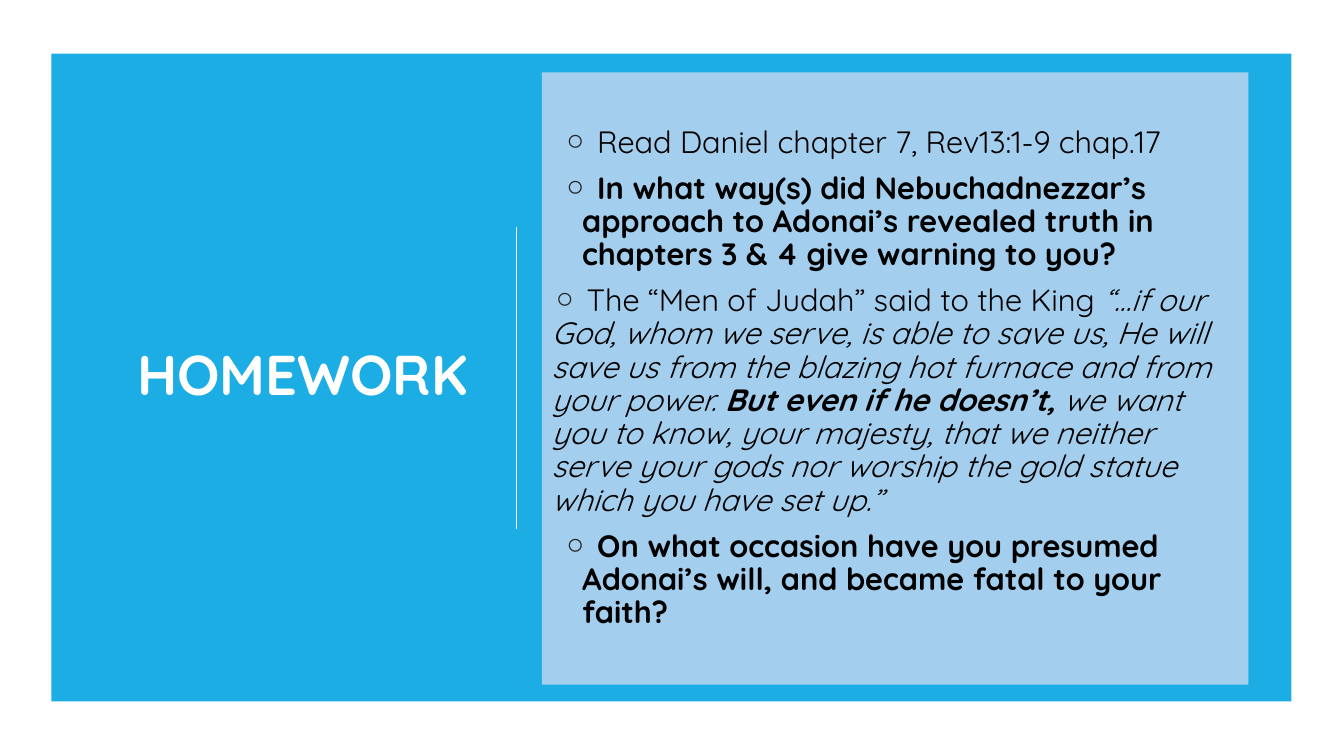
from lxml.etree import SubElement
from pptx import Presentation
from pptx.dml.color import RGBColor
from pptx.enum.shapes import MSO_CONNECTOR, MSO_SHAPE
from pptx.enum.text import MSO_ANCHOR, PP_ALIGN
from pptx.oxml.ns import qn
from pptx.util import Pt

PX = 9525
WHITE = RGBColor(0xFF, 0xFF, 0xFF)
BLACK = RGBColor(0x00, 0x00, 0x00)
BULLET = RGBColor(0x26, 0x26, 0x26)
BLUE = RGBColor(0x1C, 0xAD, 0xE4)
PALE_BLUE = RGBColor(0xA3, 0xCE, 0xED)

PLAIN, BOLD, ITALIC = {}, {"bold": True}, {"italic": True}
TASKS = [
    (29, [(" Read Daniel chapter 7, Rev13:1-9 chap.17", PLAIN)]),
    (29, [(" In what way(s) did Nebuchadnezzar’s approach to Adonai’s revealed truth "
           "in chapters 3 & 4 give warning to you?", BOLD)]),
    (0, [(" The “Men of Judah” said to the King ", PLAIN),
         ("“…if our God, whom we serve, is able to save us, He will save us from "
          "the blazing hot furnace and from your power.", ITALIC),
         (" But even if he doesn’t, ", BOLD | ITALIC),
         ("we want you to know, your majesty, that we neither serve your gods nor "
          "worship the gold statue which you have set up.”", ITALIC)]),
    (29, [(" On what occasion have you presumed Adonai’s will, and became fatal "
           "to your faith?", BOLD)]),
]


def add_panel(left, top, width, height, color):
    panel = slide.shapes.add_shape(
        MSO_SHAPE.RECTANGLE, left * PX, top * PX, width * PX, height * PX)
    panel.shadow.inherit = False
    panel.fill.solid()
    panel.fill.fore_color.rgb = color
    panel.line.fill.background()
    return panel


def add_run(paragraph, text, size, color, formats):
    run = paragraph.add_run()
    run.text = text
    run.font.color.rgb = color
    for name, value in ({"name": "Quicksand", "size": Pt(size)} | formats).items():
        setattr(run.font, name, value)


deck = Presentation()
deck.slide_width, deck.slide_height = 1280 * PX, 720 * PX
slide = deck.slides.add_slide(deck.slide_layouts[6])

add_panel(49, 51, 1181, 617, BLUE)

title = slide.shapes.add_textbox(74 * PX, 93 * PX, 381 * PX, 533 * PX).text_frame
title.word_wrap = True
title.vertical_anchor = MSO_ANCHOR.MIDDLE
heading = title.paragraphs[0]
heading.alignment = PP_ALIGN.RIGHT
heading.line_spacing = 0.9
add_run(heading, "HOMEWORK", 40, WHITE, BOLD)

divider = slide.shapes.add_connector(
    MSO_CONNECTOR.STRAIGHT, 492 * PX, 216 * PX, 492 * PX, 504 * PX)
divider.line.color.rgb = WHITE
divider.line.width = Pt(1.25)
SubElement(divider._element.spPr, qn("a:effectLst"))

homework = add_panel(516, 69, 673, 583, PALE_BLUE).text_frame
homework.word_wrap = True
homework.vertical_anchor = MSO_ANCHOR.MIDDLE
for number, (margin, phrases) in enumerate(TASKS):
    task = homework.add_paragraph() if number else homework.paragraphs[0]
    task.alignment = PP_ALIGN.LEFT
    task.line_spacing = 0.9
    task.space_before = Pt(9 if number else 0)
    properties = task._p.get_or_add_pPr()
    properties.set("marL", str(margin * PX))
    properties.set("indent", str(-19 * PX))
    bullet_color = SubElement(properties, qn("a:buClr"))
    SubElement(bullet_color, qn("a:srgbClr"), val=str(BULLET))
    SubElement(properties, qn("a:buSzPct"), val="146000")
    SubElement(properties, qn("a:buFont"), typeface="Quicksand")
    SubElement(properties, qn("a:buChar"), char="◦")
    for text, formats in phrases:
        add_run(task, text, 22, BLACK, formats)

deck.save("out.pptx")
